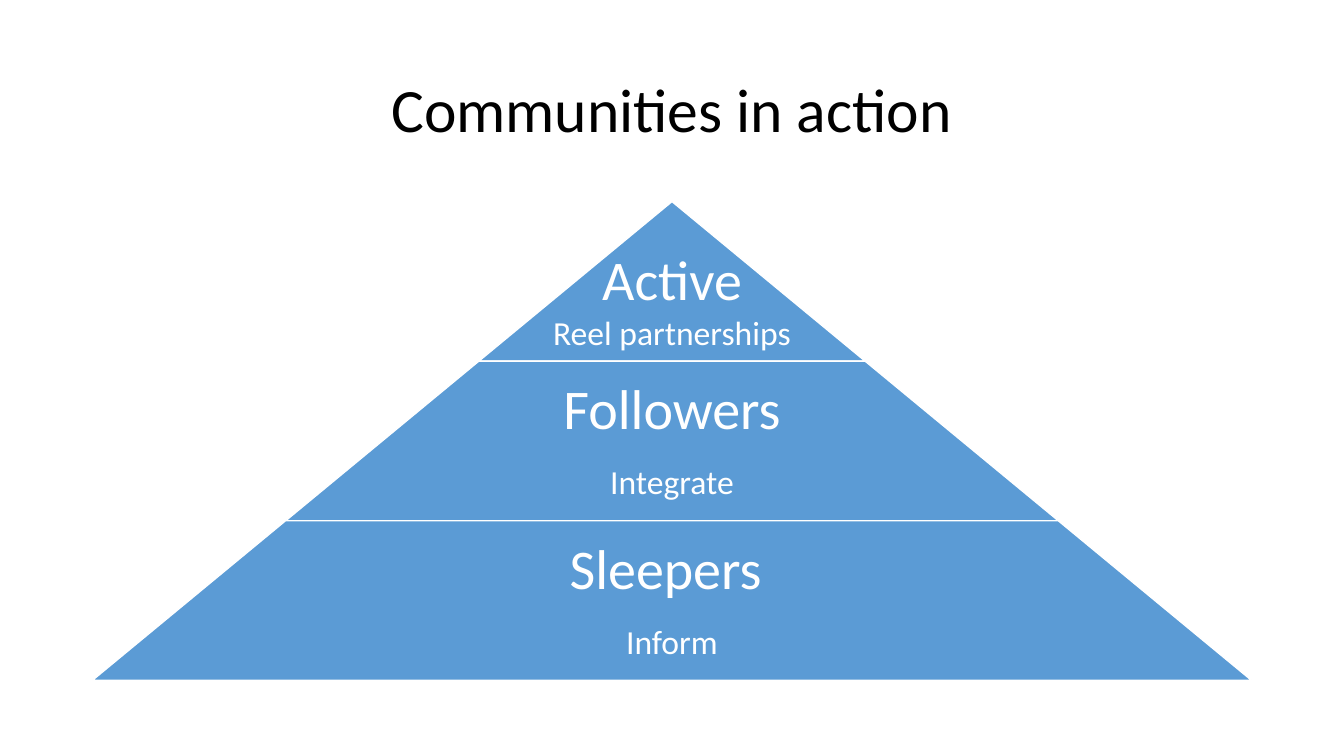
import pptx
import pptx.dml.color
import pptx.enum.text
import pptx.util

PX = 9525
COLORS = {"title": "000000", "tier": "5B9BD5", "light": "FFFFFF"}
FONT = "Calibri"
TIERS = [
    ("Active", "Reel partnerships", 3, 8),
    ("Followers", "Integrate", 17, 18),
    ("Sleepers ", "Inform", 17, 18),
]


def rgb(name):
    return pptx.dml.color.RGBColor.from_string(COLORS[name])


def format_paragraph(paragraph, size, color, space_after=0):
    paragraph.alignment = pptx.enum.text.PP_ALIGN.CENTER
    paragraph.line_spacing = 0.9
    paragraph.space_after = pptx.util.Pt(space_after)
    paragraph.font.name = FONT
    paragraph.font.size = pptx.util.Pt(size)
    paragraph.font.color.rgb = rgb(color)


def add_title(slide, left, top, width, height, text):
    title = slide.shapes.title
    title.left, title.top = left * PX, top * PX
    title.width, title.height = width * PX, height * PX
    title.text_frame.text = text
    title.text_frame.vertical_anchor = pptx.enum.text.MSO_ANCHOR.MIDDLE
    format_paragraph(title.text_frame.paragraphs[0], 44, "title")


def add_tier(slide, outline, heading, detail, gap, bottom_margin):
    builder = slide.shapes.build_freeform(*outline[0], scale=PX)
    builder.add_line_segments(outline[1:], close=True)
    shape = builder.convert_to_shape()
    shape.shadow.inherit = False
    shape.fill.solid()
    shape.fill.fore_color.rgb = rgb("tier")
    shape.line.color.rgb = rgb("light")
    shape.line.width = pptx.util.Pt(1)

    frame = shape.text_frame
    frame.word_wrap = True
    frame.vertical_anchor = pptx.enum.text.MSO_ANCHOR.BOTTOM
    frame.margin_left = frame.margin_right = frame.margin_top = 6 * PX
    frame.margin_bottom = bottom_margin * PX
    frame.text = heading
    format_paragraph(frame.paragraphs[0], 40, "light", gap)
    paragraph = frame.add_paragraph()
    paragraph.text = detail
    format_paragraph(paragraph, 24, "light")


def add_pyramid(slide, left, top, width, height, tiers):
    center = left + width // 2
    tier_height = height // len(tiers)
    step = width // (2 * len(tiers))
    for index, tier in enumerate(tiers):
        upper, lower = index * step, (index + 1) * step
        tier_top = top + index * tier_height
        tier_bottom = tier_top + tier_height
        outline = [
            (center - lower, tier_bottom),
            (center - upper, tier_top),
            (center + upper, tier_top),
            (center + lower, tier_bottom),
        ]
        add_tier(slide, outline, *tier)


def main():
    presentation = pptx.Presentation()
    presentation.slide_width = 1280 * PX
    presentation.slide_height = 720 * PX
    slide = presentation.slides.add_slide(presentation.slide_layouts[5])
    add_title(slide, 88, 38, 1104, 139, "Communities in action")
    add_pyramid(slide, 88, 192, 1104, 456, TIERS)
    presentation.save("out.pptx")


if __name__ == "__main__":
    main()
